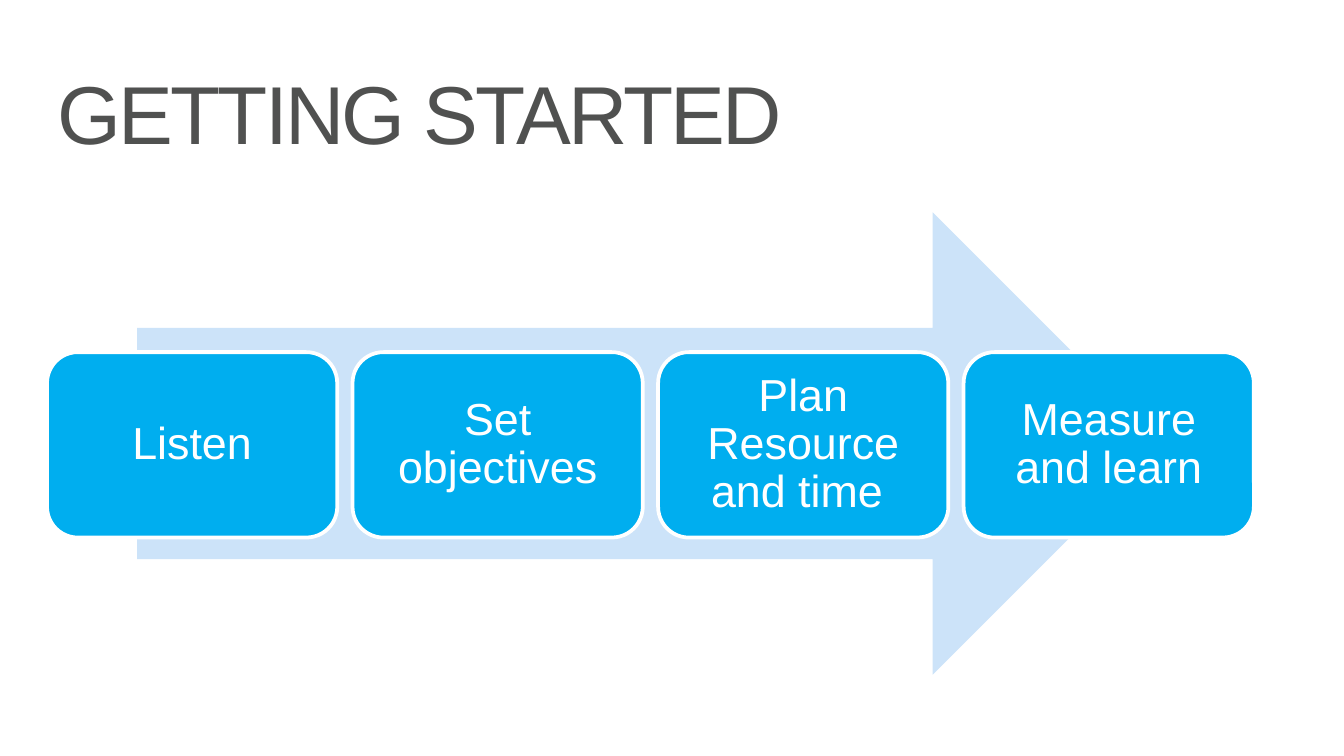
from pptx import Presentation
from pptx.dml.color import RGBColor
from pptx.enum import shapes, text
from pptx.util import Inches, Pt

GREY = RGBColor(0x50, 0x51, 0x50)
PALE = RGBColor(0xCC, 0xE3, 0xF9)
BLUE = RGBColor(0x00, 0xAE, 0xEF)
WHITE = RGBColor(0xFF, 0xFF, 0xFF)

STEPS = ["Listen", "Set objectives", "Plan Resource and time ", "Measure and learn"]
LEFT, LAST, TOP, WIDE, HIGH = 0.35, 7.17, 2.62, 2.16, 1.38
PITCH = (LAST - LEFT) / (len(STEPS) - 1)


def write(frame, words, size, color):
    frame.word_wrap = True
    frame.vertical_anchor = text.MSO_ANCHOR.MIDDLE
    para = frame.paragraphs[0]
    para.add_run().text = words
    font = para.font
    font.name, font.size = "Arial", Pt(size)
    font.color.rgb = color
    return para


def add_title(slide, words):
    box = slide.shapes.add_textbox(Inches(0.33), Inches(0.41), Inches(9), Inches(0.94))
    para = write(box.text_frame, words, 44, GREY)
    para.line_spacing = Pt(46)
    # Tighten the letters by 1.5 pt
    para.runs[0].font._element.set("spc", "-150")


def add_block(slide, kind, left, top, wide, high, fill):
    block = slide.shapes.add_shape(
        kind, Inches(left), Inches(top), Inches(wide), Inches(high))
    block.shadow.inherit = False
    block.fill.solid()
    block.fill.fore_color.rgb = fill
    block.line.fill.background()
    return block


def add_step(slide, left, words):
    step = add_block(slide, shapes.MSO_SHAPE.ROUNDED_RECTANGLE,
                     left, TOP, WIDE, HIGH, BLUE)
    step.line.color.rgb = WHITE
    step.line.width = Pt(2)
    frame = step.text_frame
    frame.margin_left = frame.margin_right = Inches(0.1)
    frame.margin_top = frame.margin_bottom = Inches(0.1)
    para = write(frame, words, 24, WHITE)
    para.alignment = text.PP_ALIGN.CENTER
    para.line_spacing = 0.9


def main():
    deck = Presentation()
    # Widescreen, 16 to 9
    deck.slide_width = Inches(10)
    deck.slide_height = Inches(10) * 9 // 16
    slide = deck.slides.add_slide(deck.slide_layouts[6])

    # Heading
    add_title(slide, "GETTING STARTED")

    # Arrow behind the steps
    add_block(slide, shapes.MSO_SHAPE.RIGHT_ARROW, 1.02, 1.58, 7.64, 3.44, PALE)

    # Evenly spaced steps
    for i, words in enumerate(STEPS):
        add_step(slide, LEFT + i * PITCH, words)

    deck.save("out.pptx")


if __name__ == "__main__":
    main()
